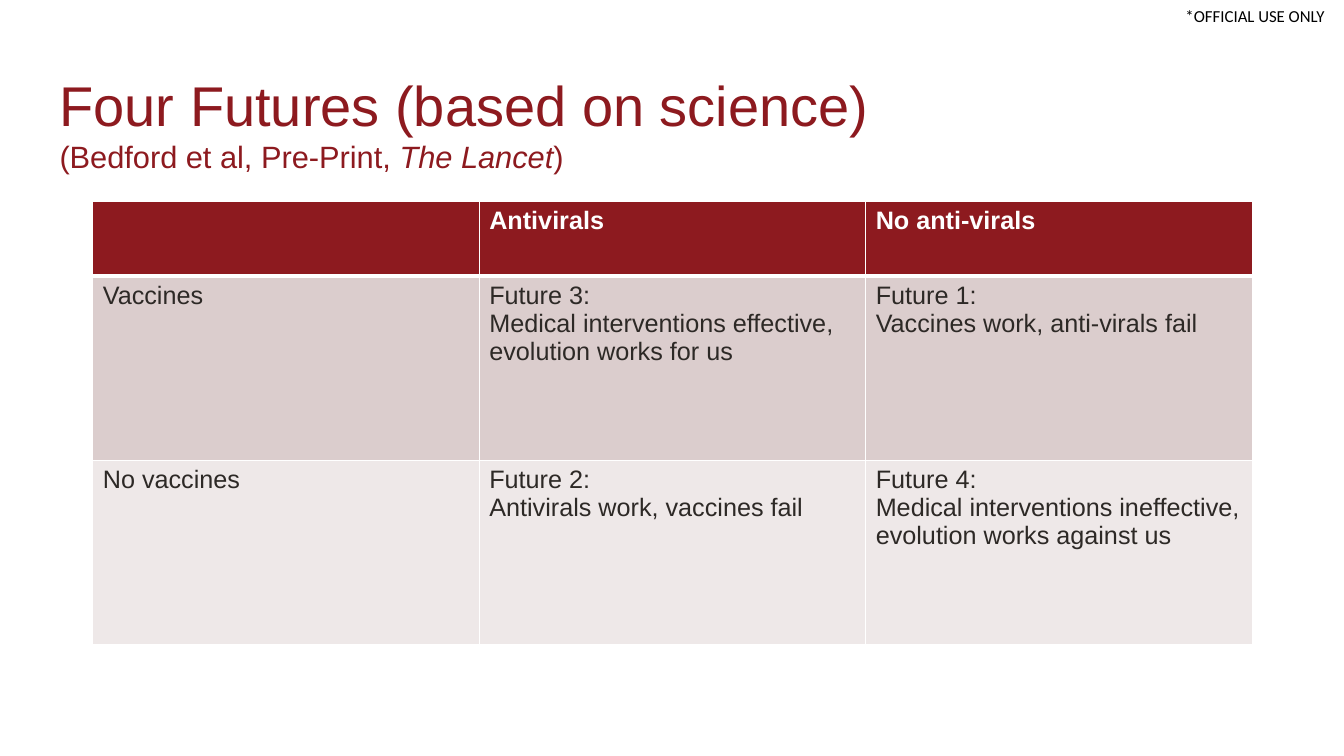
from lxml.etree import SubElement
from pptx import Presentation
from pptx.dml.color import RGBColor
from pptx.enum.text import MSO_ANCHOR, PP_ALIGN
from pptx.oxml.ns import qn
from pptx.util import Inches, Pt

RED = RGBColor(0x8D, 0x1A, 0x1F)
ROSE = RGBColor(0xDB, 0xCD, 0xCD)
PALE = RGBColor(0xEE, 0xE8, 0xE8)
INK = RGBColor(0x2D, 0x29, 0x26)
WHITE = RGBColor(0xFF, 0xFF, 0xFF)
BLACK = RGBColor(0, 0, 0)


def add_text_box(s, left, top, width, height):
    tf = s.shapes.add_textbox(Inches(left), Inches(top), Inches(width), Inches(height)).text_frame
    tf.word_wrap = True
    tf.vertical_anchor = MSO_ANCHOR.MIDDLE
    tf.margin_left = tf.margin_right = tf.margin_top = tf.margin_bottom = 0
    return tf


def add_border(cell, side, points):
    ln = SubElement(cell._tc.get_or_add_tcPr(), qn(f"a:{side}"), w=str(Pt(points)))
    SubElement(SubElement(ln, qn("a:solidFill")), qn("a:srgbClr"), val=str(WHITE))


prs = Presentation()
prs.slide_width, prs.slide_height = Inches(13.33), Inches(7.5)
s = prs.slides.add_slide(prs.slide_layouts[6])

# Marking in the top right corner
tf = add_text_box(s, 11.57, 0, 1.76, 0.32)
tf.margin_right = Inches(0.19)
p = tf.paragraphs[0]
p.text = "*OFFICIAL USE ONLY"
p.alignment = PP_ALIGN.RIGHT
p.font.name, p.font.size, p.font.color.rgb = "Calibri", Pt(12), BLACK

# Title with its source
p = add_text_box(s, 0.59, 0.67, 10.02, 1.1).paragraphs[0]
p.font.name, p.font.color.rgb = "Arial", RED
r = p.add_run()
r.text, r.font.size = "Four Futures (based on science)", Pt(40)
p.add_line_break()
for text, italic in [("(Bedford et al, Pre-Print, ", False), ("The Lancet", True), (")", False)]:
    r = p.add_run()
    r.text, r.font.size, r.font.italic = text, Pt(22), italic

# Table of futures
rows = [
    ["", "Antivirals", "No anti-virals"],
    ["Vaccines",
     "Future 3:\nMedical interventions effective, evolution works for us",
     "Future 1:\nVaccines work, anti-virals fail"],
    ["No vaccines",
     "Future 2:\nAntivirals work, vaccines fail",
     "Future 4:\nMedical interventions ineffective, evolution works against us"],
]
row_styles = [(0.74, RED, WHITE), (1.83, ROSE, INK), (1.83, PALE, INK)]
table = s.shapes.add_table(3, 3, Inches(0.92), Inches(2), Inches(11.5), Inches(4.4)).table
for i, (texts, (height, fill, color)) in enumerate(zip(rows, row_styles)):
    table.rows[i].height = Inches(height)
    for j, text in enumerate(texts):
        cell = table.cell(i, j)
        # A thicker rule separates the header from the body
        for side, points in [("lnL", 1), ("lnR", 1),
                             ("lnT", 3 if i == 1 else 1), ("lnB", 3 if i == 0 else 1)]:
            add_border(cell, side, points)
        cell.fill.solid()
        cell.fill.fore_color.rgb = fill
        cell.text = text
        for p in cell.text_frame.paragraphs:
            p.font.name, p.font.size, p.font.color.rgb = "Arial", Pt(18), color
            p.font.bold = i == 0

prs.save("out.pptx")
